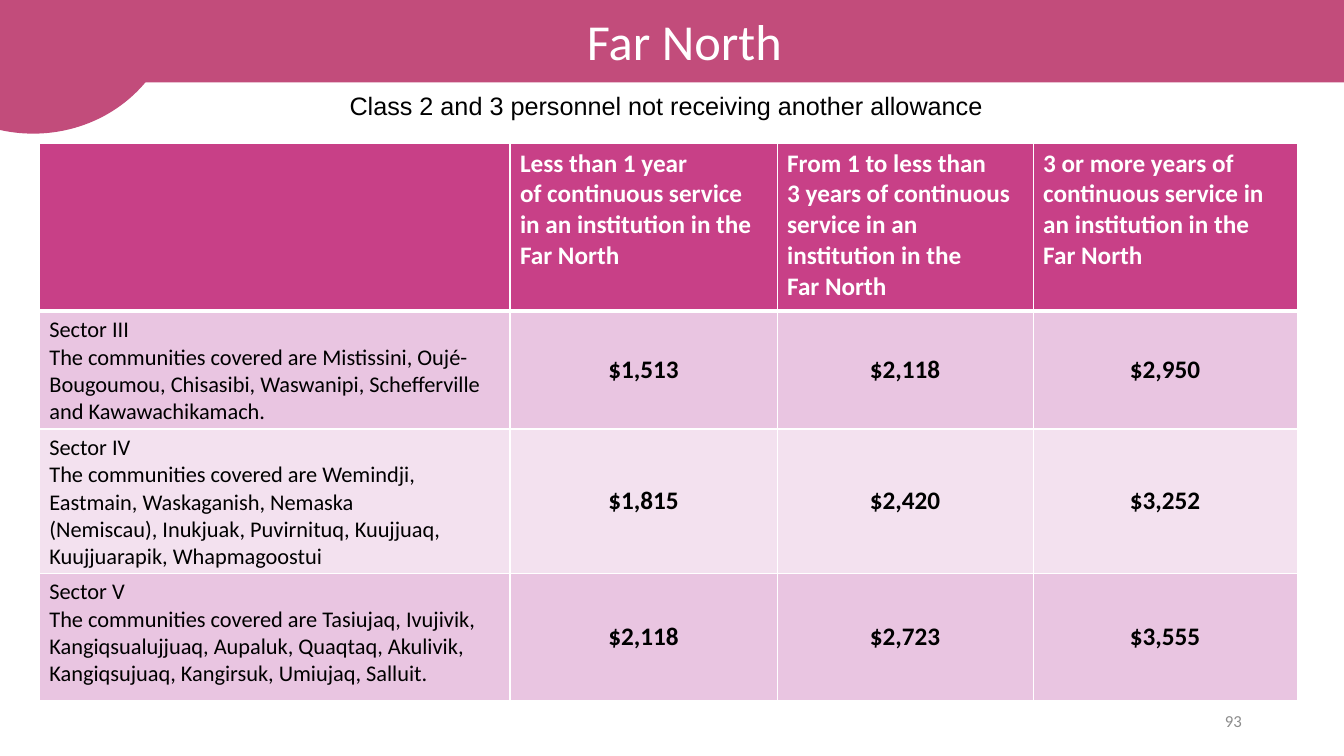
"""Build the Far North allowance slide."""
from lxml.etree import SubElement
from pptx import Presentation
from pptx.dml.color import RGBColor
from pptx.enum.shapes import MSO_SHAPE as Preset
from pptx.enum.text import MSO_ANCHOR as Anchor, PP_ALIGN as Align
from pptx.oxml.ns import qn
from pptx.util import Pt

ROSE = RGBColor(0xC2, 0x4C, 0x7B)
MAGENTA = RGBColor(0xC8, 0x40, 0x87)
PINK = RGBColor(0xE9, 0xC5, 0xE1)
PALE_PINK = RGBColor(0xF3, 0xE1, 0xEF)
GREY = RGBColor(0x8C, 0x8C, 0x8C)
BLACK = RGBColor(0, 0, 0)
WHITE = RGBColor(255, 255, 255)

COLUMN_WIDTHS = (336.2, 190.8, 182.9, 188.6)
ROW_HEIGHTS = (120.2, 83.5, 103, 90.7)
SERVICE_HEADINGS = (
    "",
    "Less than 1 year\nof continuous service in an institution in the Far North",
    "From 1 to less than\n3 years of continuous service in an institution in the \vFar North",
    "3 or more years of continuous service in an institution in the\nFar North",
)
SECTORS = (
    ("Sector III\nThe communities covered are Mistissini, Oujé-Bougoumou, Chisasibi, "
     "Waswanipi, Schefferville and Kawawachikamach.", "$1,513", "$2,118", "$2,950"),
    ("Sector IV\nThe communities covered are Wemindji, Eastmain, Waskaganish, Nemaska\n"
     "(Nemiscau), Inukjuak, Puvirnituq, Kuujjuaq, Kuujjuarapik, Whapmagoostui",
     "$1,815", "$2,420", "$3,252"),
    ("Sector V\nThe communities covered are Tasiujaq, Ivujivik, Kangiqsualujjuaq, Aupaluk, "
     "Quaqtaq, Akulivik, Kangiqsujuaq, Kangirsuk, Umiujaq, Salluit.",
     "$2,118", "$2,723", "$3,555"),
)


def write(frame, text, size=18, color=BLACK, bold=False, font="Calibri",
          align=Align.LEFT, anchor=Anchor.TOP):
    frame.word_wrap = True
    frame.vertical_anchor = anchor
    frame.text = text
    for paragraph in frame.paragraphs:
        paragraph.alignment = align
        for run in paragraph.runs:
            run.font.name = font
            run.font.size = Pt(size)
            run.font.bold = bold
            run.font.color.rgb = color


class AllowanceSlide:
    def __init__(self, slide, accent):
        self.shapes = slide.shapes
        self.accent = accent

    def panel(self, preset, *box):
        panel = self.shapes.add_shape(preset, *map(Pt, box))
        panel.shadow.inherit = False
        panel.fill.solid()
        panel.fill.fore_color.rgb = self.accent
        panel.line.color.rgb = self.accent
        panel.line.width = Pt(1)
        return panel

    def label(self, text, *box, **style):
        write(self.shapes.add_textbox(*map(Pt, box)).text_frame, text, **style)

    def border(self, cell, **widths):
        properties = cell._tc.get_or_add_tcPr()
        for side, width in widths.items():
            edge = SubElement(properties, qn(f"a:ln{side}"), w=str(Pt(width)))
            SubElement(SubElement(edge, qn("a:solidFill")), qn("a:srgbClr"), val=str(WHITE))

    def cell(self, cell, text, fill, top=1, bottom=1, **style):
        write(cell.text_frame, text, **style)
        cell.vertical_anchor = style.get("anchor", Anchor.TOP)
        self.border(cell, L=1, R=1, T=top, B=bottom)
        cell.fill.solid()
        cell.fill.fore_color.rgb = fill

    def allowances(self, left, top):
        grid = self.shapes.add_table(
            len(ROW_HEIGHTS), len(COLUMN_WIDTHS), Pt(left), Pt(top),
            Pt(sum(COLUMN_WIDTHS)), Pt(sum(ROW_HEIGHTS))).table
        for column, width in zip(grid.columns, COLUMN_WIDTHS):
            column.width = Pt(width)
        for row, height in zip(grid.rows, ROW_HEIGHTS):
            row.height = Pt(height)
        for column, heading in enumerate(SERVICE_HEADINGS):
            self.cell(grid.cell(0, column), heading, MAGENTA, bottom=3, color=WHITE, bold=True)
        for row, (communities, *amounts) in enumerate(SECTORS, 1):
            fill = PINK if row % 2 else PALE_PINK
            top_edge = 3 if row == 1 else 1
            self.cell(grid.cell(row, 0), communities, fill, top=top_edge, size=16)
            for column, amount in enumerate(amounts, 1):
                self.cell(grid.cell(row, column), amount, fill, top=top_edge, bold=True,
                          align=Align.CENTER, anchor=Anchor.MIDDLE)


def main():
    deck = Presentation()
    deck.slide_width, deck.slide_height = Pt(960), Pt(540)
    page = AllowanceSlide(deck.slides.add_slide(deck.slide_layouts[6]), ROSE)
    banner = page.panel(Preset.ROUNDED_RECTANGLE, 0, 0, 977.8, 58.3)
    write(banner.text_frame, "Far North", size=36, color=WHITE,
          align=Align.CENTER, anchor=Anchor.MIDDLE)
    page.panel(Preset.OVAL, -77.8, -95.8, 203, 190.8)
    page.label("93", 678.2, 500.4, 216, 28.8, size=12, color=GREY,
               align=Align.RIGHT, anchor=Anchor.MIDDLE)
    page.label("Class 2 and 3 personnel not receiving another allowance",
               242.6, 61.2, 469.4, 28.8, font="Arial")
    page.allowances(28.1, 102.2)
    deck.save("out.pptx")


if __name__ == "__main__":
    main()
